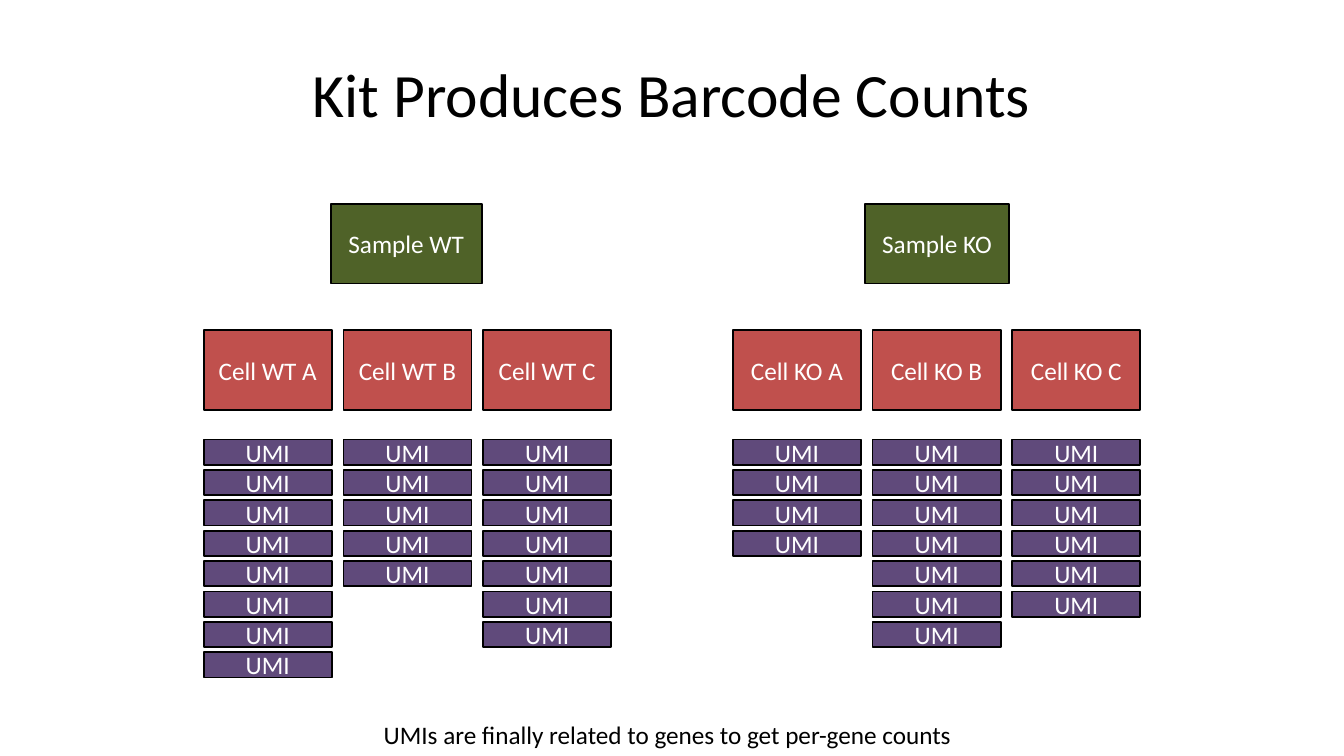
"""Build a slide showing samples, cells and their UMI barcode counts."""
from dataclasses import dataclass

from pptx import Presentation
from pptx.dml.color import RGBColor
from pptx.enum.shapes import MSO_SHAPE
from pptx.enum.text import MSO_ANCHOR, PP_ALIGN
from pptx.shapes.autoshape import Shape
from pptx.slide import Slide
from pptx.text.text import TextFrame
from pptx.util import Pt

RECTANGLE = MSO_SHAPE.RECTANGLE
MIDDLE, TOP = MSO_ANCHOR.MIDDLE, MSO_ANCHOR.TOP
CENTER, LEFT = PP_ALIGN.CENTER, PP_ALIGN.LEFT

BLACK, WHITE = "000000", "FFFFFF"
SAMPLE_GREEN, CELL_RED, UMI_PURPLE = "4F6228", "C0504D", "604A7B"

SAMPLE_TOP, CELL_TOP, UMI_TOP = 145.5, 235.8, 314
CELL_WIDTH, CELL_PITCH = 91.5, 99.8
BLOCK_HEIGHT, UMI_HEIGHT, UMI_PITCH = 57, 18, 21.7


@dataclass(frozen=True)
class Sample:
    """A sample with its placement and the UMI count of each cell."""

    name: str
    left: float
    width: float
    cells_left: float
    umi_counts: dict[str, int]


SAMPLES = (
    Sample("WT", 236.2, 108, 145.5, {"A": 8, "B": 5, "C": 7}),
    Sample("KO", 617.8, 103, 523.5, {"A": 4, "B": 7, "C": 6}),
)


def color(value: str) -> RGBColor:
    """Return the colour for a hex string."""
    return RGBColor.from_string(value)


def write(frame: TextFrame, text: str, *, size: float = 18, ink: str = BLACK,
          align: PP_ALIGN = CENTER, anchor: MSO_ANCHOR = MIDDLE,
          wrap: bool = True) -> None:
    """Write one formatted paragraph into a text frame."""
    frame.word_wrap = wrap
    frame.vertical_anchor = anchor
    para = frame.paragraphs[0]
    para.alignment = align
    span = para.add_run()
    span.text = text
    span.font.name = "Calibri"
    span.font.size = Pt(size)
    span.font.color.rgb = color(ink)


def add_block(page: Slide, text: str, fill: str, left: float, top: float,
              width: float, height: float) -> Shape:
    """Draw a filled, outlined rectangle with a white label."""
    box = page.shapes.add_shape(RECTANGLE, Pt(left), Pt(top), Pt(width), Pt(height))
    box.shadow.inherit = False
    box.fill.solid()
    box.fill.fore_color.rgb = color(fill)
    box.line.color.rgb = color(BLACK)
    box.line.width = Pt(1.25)
    write(box.text_frame, text, ink=WHITE)
    return box


def add_sample(page: Slide, sample: Sample) -> None:
    """Draw a sample above its cells and their UMI stacks."""
    add_block(page, f"Sample {sample.name}", SAMPLE_GREEN,
              sample.left, SAMPLE_TOP, sample.width, BLOCK_HEIGHT)
    for column, (cell, count) in enumerate(sample.umi_counts.items()):
        left = sample.cells_left + column * CELL_PITCH
        add_block(page, f"Cell {sample.name} {cell}", CELL_RED,
                  left, CELL_TOP, CELL_WIDTH, BLOCK_HEIGHT)
        for row in range(count):
            add_block(page, "UMI", UMI_PURPLE, left, UMI_TOP + row * UMI_PITCH,
                      CELL_WIDTH, UMI_HEIGHT)


def main() -> None:
    """Build the slide and save the deck."""
    deck = Presentation()
    deck.slide_width, deck.slide_height = Pt(960), Pt(540)
    page = deck.slides.add_slide(deck.slide_layouts[6])
    title = page.shapes.add_textbox(Pt(48), Pt(21.6), Pt(864), Pt(90))
    write(title.text_frame, "Kit Produces Barcode Counts", size=44)
    for sample in SAMPLES:
        add_sample(page, sample)
    caption = page.shapes.add_textbox(Pt(267), Pt(510), Pt(425.5), Pt(29))
    write(caption.text_frame, "UMIs are finally related to genes to get per-gene counts",
          align=LEFT, anchor=TOP, wrap=False)
    deck.save("out.pptx")


if __name__ == "__main__":
    main()
